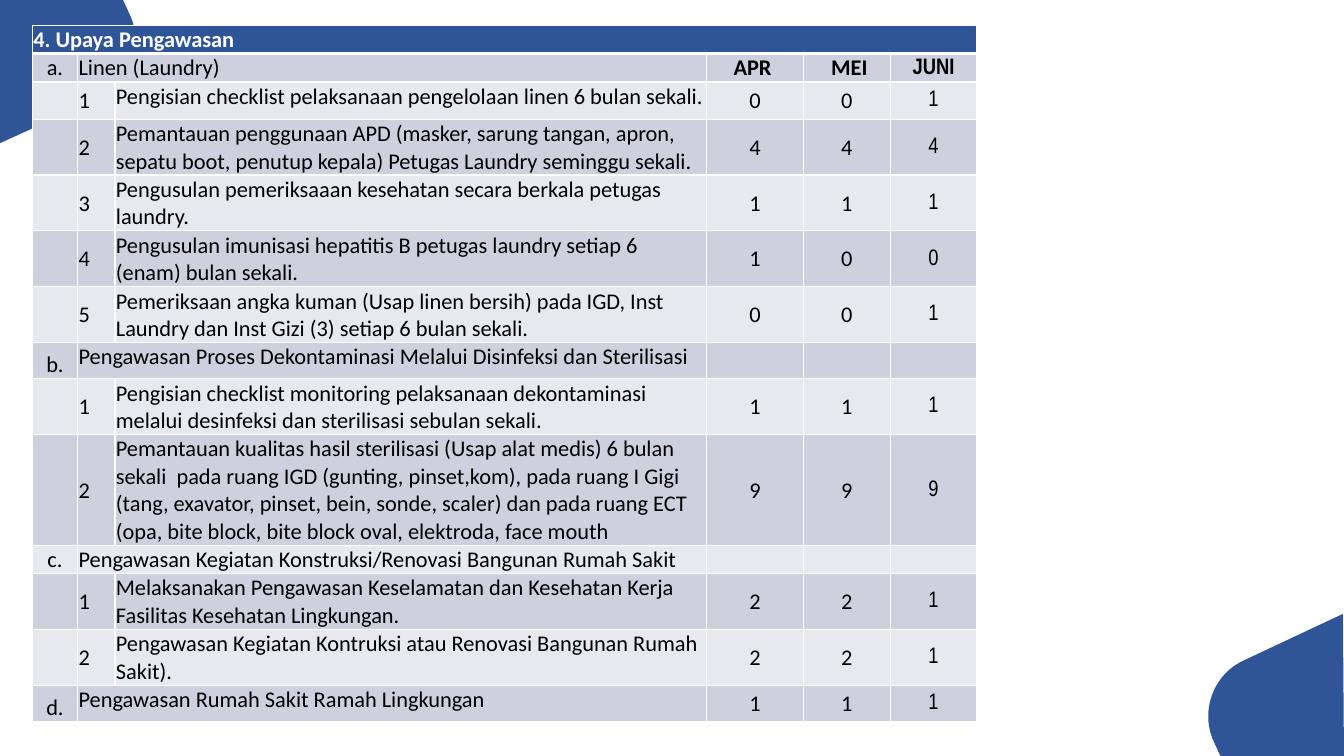
"""Build the monitoring table slide with two corner shapes."""
from dataclasses import dataclass

from lxml import etree
from pptx import Presentation
from pptx.dml.color import RGBColor
from pptx.enum.text import MSO_ANCHOR, PP_ALIGN
from pptx.oxml.ns import qn
from pptx.util import Emu, Pt

PX = 9144
TOP, MIDDLE, BOTTOM = MSO_ANCHOR.TOP, MSO_ANCHOR.MIDDLE, MSO_ANCHOR.BOTTOM
LEFT, CENTER = PP_ALIGN.LEFT, PP_ALIGN.CENTER
COLUMNS = (45, 37, 587, 96, 86, 86)
HEADER_HEIGHT = 25


@dataclass(frozen=True)
class Theme:
    blue: str = "2F5597"
    white: str = "FFFFFF"
    black: str = "000000"
    bands: tuple[str, str] = ("CDD1DD", "E8E9EF")
    font: str = "Calibri"
    narrow: str = "Arial Narrow"
    size: int = 16
    border: int = 1
    header_border: int = 3


@dataclass(frozen=True)
class Row:
    height: int
    label: str
    letter: str = ""
    number: str = ""
    counts: tuple[str, str, str] = ("", "", "")
    anchor: MSO_ANCHOR = TOP
    bold: bool = False


@dataclass(frozen=True)
class Corner:
    before: tuple[tuple[int, int], ...]
    curve: tuple[tuple[int, int], ...]
    after: tuple[tuple[int, int], ...]


THEME = Theme()
CORNERS = (
    Corner(((1333, 750), (1211, 751)),
           ((1204, 736), (1190, 706), (1203, 669), (1234, 655)),
           ((1332, 609),)),
    Corner(((0, 0), (122, 0)),
           ((129, 15), (143, 46), (129, 83), (99, 97)),
           ((0, 142),)),
)
ROWS = (
    Row(25, "Linen (Laundry)", letter="a.", counts=("APR ", " MEI", "JUNI"), anchor=MIDDLE, bold=True),
    Row(37, "Pengisian checklist pelaksanaan pengelolaan linen 6 bulan sekali.",
        number="1", counts=("0", "0", "1")),
    Row(53, "Pemantauan penggunaan APD (masker, sarung tangan, apron, sepatu boot, "
        "penutup kepala) Petugas Laundry seminggu sekali.", number="2", counts=("4", "4", "4")),
    Row(48, "Pengusulan pemeriksaaan kesehatan secara berkala petugas laundry.",
        number="3", counts=("1", "1", "1")),
    Row(48, "Pengusulan imunisasi hepatitis B petugas laundry setiap 6 (enam) bulan sekali.",
        number="4", counts=("1", "0", "0")),
    Row(53, "Pemeriksaan angka kuman (Usap linen bersih) pada IGD, Inst Laundry dan "
        "Inst Gizi (3) setiap 6 bulan sekali.", number="5", counts=("0", "0", "1")),
    Row(36, "Pengawasan Proses Dekontaminasi Melalui Disinfeksi dan Sterilisasi", letter="b."),
    Row(53, "Pengisian checklist monitoring pelaksanaan dekontaminasi melalui desinfeksi "
        "dan sterilisasi sebulan sekali.", number="1", counts=("1", "1", "1")),
    Row(100, "Pemantauan kualitas hasil sterilisasi (Usap alat medis) 6 bulan sekali  pada "
        "ruang IGD (gunting, pinset,kom), pada ruang I Gigi (tang, exavator, pinset, bein, "
        "sonde, scaler) dan pada ruang ECT (opa, bite block, bite block oval, elektroda, "
        "face mouth", number="2", counts=("9", "9", "9")),
    Row(25, "Pengawasan Kegiatan Konstruksi/Renovasi Bangunan Rumah Sakit",
        letter="c.", anchor=MIDDLE),
    Row(48, "Melaksanakan Pengawasan Keselamatan dan Kesehatan Kerja Fasilitas "
        "Kesehatan Lingkungan.", number="1", counts=("2", "2", "1")),
    Row(48, "Pengawasan Kegiatan Kontruksi atau Renovasi Bangunan Rumah Sakit).",
        number="2", counts=("2", "2", "1")),
    Row(36, "Pengawasan Rumah Sakit Ramah Lingkungan", letter="d.", counts=("1", "1", "1")),
)


def px(value: float) -> Emu:
    """Turn px into EMU."""
    return Emu(round(value * PX))


def bezier(points: tuple, steps: int = 24) -> list[tuple[float, float]]:
    """Sample a cubic curve, both ends included."""
    weights = [((1 - t) ** 3, 3 * t * (1 - t) ** 2, 3 * t * t * (1 - t), t ** 3)
               for t in (i / steps for i in range(steps + 1))]
    return [tuple(sum(w * p[axis] for w, p in zip(row, points)) for axis in (0, 1))
            for row in weights]


def add_corner(s, corner: Corner) -> None:
    """Draw one rounded corner shape."""
    points = [(px(x), px(y)) for x, y in (*corner.before, *bezier(corner.curve), *corner.after)]
    builder = s.shapes.build_freeform(*points[0])
    builder.add_line_segments(points[1:])
    sp = builder.convert_to_shape()
    sp.shadow.inherit = False
    sp.fill.solid()
    sp.fill.fore_color.rgb = RGBColor.from_string(THEME.blue)
    sp.line.fill.background()


def set_borders(cell, top: int, bottom: int) -> None:
    """Give a cell white borders of the stated point widths."""
    tc_pr = cell._tc.get_or_add_tcPr()
    widths = {"a:lnL": THEME.border, "a:lnR": THEME.border, "a:lnT": top, "a:lnB": bottom}
    for i, (tag, width) in enumerate(widths.items()):
        ln = etree.Element(qn(tag), w=str(Pt(width)))
        fill = etree.SubElement(ln, qn("a:solidFill"))
        etree.SubElement(fill, qn("a:srgbClr"), val=THEME.white)
        tc_pr.insert(i, ln)


def fill_cell(cell, text: str, fill: str, *, color: str = THEME.black, font: str = THEME.font,
              bold: bool = False, align: PP_ALIGN = LEFT, anchor: MSO_ANCHOR = MIDDLE,
              top: int = THEME.border, bottom: int = THEME.border) -> None:
    """Set the text, fill and borders of a cell."""
    cell.margin_left = cell.margin_right = cell.margin_top = px(1)
    cell.margin_bottom = 0
    cell.vertical_anchor = anchor
    cell.fill.solid()
    cell.fill.fore_color.rgb = RGBColor.from_string(fill)
    set_borders(cell, top, bottom)
    p = cell.text_frame.paragraphs[0]
    p.text = text
    p.alignment = align
    for r in p.runs:
        r.font.name = font
        r.font.size = Pt(THEME.size)
        r.font.bold = bold
        r.font.color.rgb = RGBColor.from_string(color)
    if not text:
        etree.SubElement(p._p, qn("a:endParaRPr"), sz=str(THEME.size * 100))


def add_row(table, index: int, row: Row) -> None:
    """Fill one body row of the table."""
    fill = THEME.bands[(index - 1) % 2]
    top = THEME.header_border if index == 1 else THEME.border
    cells = [table.cell(index, i) for i in range(len(COLUMNS))]
    fill_cell(cells[0], row.letter, fill, align=CENTER, anchor=BOTTOM, top=top)
    if row.letter:
        cells[1].merge(cells[2])
        fill_cell(cells[1], row.label, fill, anchor=row.anchor, top=top)
    else:
        fill_cell(cells[1], row.number, fill)
        fill_cell(cells[2], row.label, fill, anchor=row.anchor)
    fonts = (THEME.font, THEME.font, THEME.narrow)
    for cell, count, font in zip(cells[3:], row.counts, fonts):
        fill_cell(cell, count, fill, font=font, bold=row.bold, align=CENTER, top=top)


def add_monitoring_table(s) -> None:
    """Draw the table with its header and body rows."""
    heights = (HEADER_HEIGHT, *(row.height for row in ROWS))
    frame = s.shapes.add_table(len(heights), len(COLUMNS), px(32), px(25), px(938), px(679))
    table = frame.table
    table.horz_banding = False
    for column, width in zip(table.columns, COLUMNS):
        column.width = px(width)
    for line, height in zip(table.rows, heights):
        line.height = px(height)
    frame.height = px(679)
    title = table.cell(0, 0)
    title.merge(table.cell(0, len(COLUMNS) - 1))
    fill_cell(title, "4. Upaya Pengawasan", THEME.blue, color=THEME.white, bold=True,
              anchor=BOTTOM, bottom=THEME.header_border)
    for index, row in enumerate(ROWS, start=1):
        add_row(table, index, row)


def main() -> None:
    """Build and save the slide."""
    prs = Presentation()
    prs.slide_width, prs.slide_height = px(1333), px(750)
    s = prs.slides.add_slide(prs.slide_layouts[6])
    for corner in CORNERS:
        add_corner(s, corner)
    add_monitoring_table(s)
    prs.save("out.pptx")


if __name__ == "__main__":
    main()
